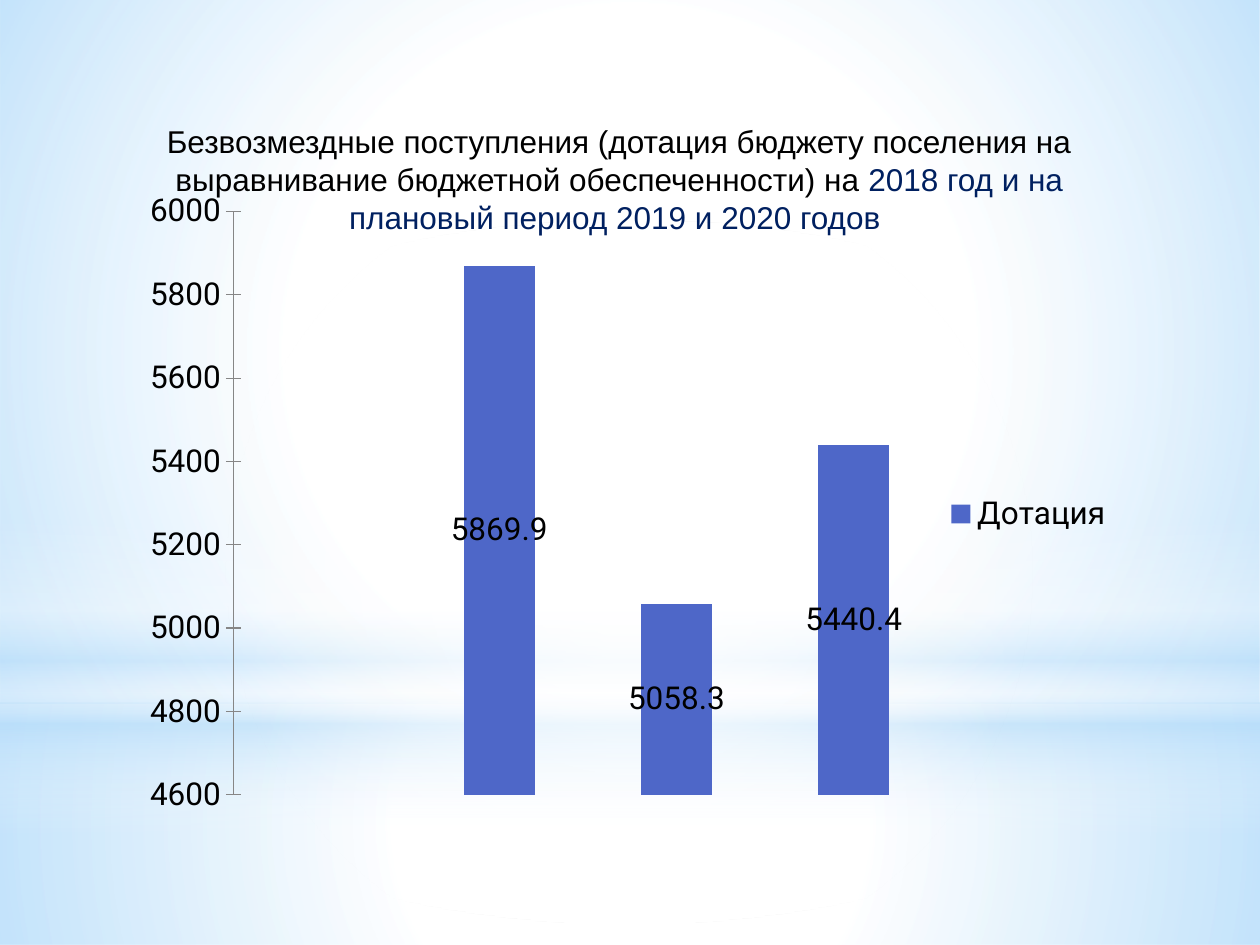
from lxml import etree
from pptx import Presentation
from pptx.chart.data import CategoryChartData
from pptx.dml.color import RGBColor
from pptx.enum import chart as ch, shapes, text
from pptx.oxml import parse_xml
from pptx.oxml.ns import nsdecls, qn
from pptx.util import Inches, Pt

THEME = {
    "white": "FFFFFF", "sky": "B4DCFA", "bar": "4E67C8",
    "ink": "000000", "navy": "002060", "axis": "868686",
    "title_font": "Arial", "chart_font": "Roboto", "size": 18,
}
CIRCLE = ('<a:path path="circle"><a:fillToRect l="50000" t="50000" '
          'r="50000" b="50000"/></a:path>')
DOWNWARD = '<a:lin ang="5400000" scaled="0"/>'

prs = Presentation()
prs.slide_width, prs.slide_height = Inches(10), Inches(7.5)
slide = prs.slides.add_slide(prs.slide_layouts[6])
slide.background.fill.solid()
slide.background.fill.fore_color.rgb = RGBColor.from_string(THEME["white"])


def share(left, top, width, height):
    return [int(part * whole) for part, whole in zip(
        (left, top, width, height), (prs.slide_width, prs.slide_height) * 2)]


def style(font, face, colour):
    font.name = THEME[face]
    font.size = Pt(THEME["size"])
    font.color.rgb = RGBColor.from_string(THEME[colour])


RECT, OVAL = shapes.MSO_SHAPE.RECTANGLE, shapes.MSO_SHAPE.OVAL
glows = [
    (RECT, (0, 0.744, 1, 0.256), CIRCLE,
     [(0, "white", 91), (37, "white", 76), (100, "sky", 79)]),
    (RECT, (0, 0, 1, 0.744), CIRCLE,
     [(0, "white", 89), (48, "white", 62), (100, "sky", 79)]),
    (RECT, (0, 0.549, 1, 0.333), DOWNWARD,
     [(0, "white", 0), (29, "white", 30), (45, "sky", 40),
      (55, "white", 26), (65, "sky", 60), (100, "white", 0)]),
    (OVAL, (0, 0.233, 1, 0.744), CIRCLE,
     [(0, "white", 100), (56, "white", 0)]),
]
for outline, place, direction, stops in glows:
    glow = slide.shapes.add_shape(outline, *share(*place))
    glow.shadow.inherit = False
    glow.line.fill.background()
    glow.fill.background()
    stop_list = "".join(
        f'<a:gs pos="{pos * 1000}"><a:srgbClr val="{THEME[colour]}">'
        f'<a:alpha val="{alpha * 1000}"/></a:srgbClr></a:gs>'
        for pos, colour, alpha in stops)
    props = glow.fill._xPr
    props.replace(props.find(qn("a:noFill")), parse_xml(
        f'<a:gradFill {nsdecls("a")} rotWithShape="1"><a:gsLst>{stop_list}'
        f'</a:gsLst>{direction}</a:gradFill>'))

heading = slide.shapes.add_textbox(*share(0.108, 0.123, 0.767, 0.135)).text_frame
heading.word_wrap = True
heading.auto_size = text.MSO_AUTO_SIZE.SHAPE_TO_FIT_TEXT
lines = [
    [("Безвозмездные поступления (дотация бюджету поселения на", "ink")],
    [("выравнивание бюджетной обеспеченности) на ", "ink"),
     ("2018 год и на плановый период 2019 и 2020 годов ", "navy")],
]
for number, pieces in enumerate(lines):
    line = heading.add_paragraph() if number else heading.paragraphs[0]
    line.alignment = text.PP_ALIGN.CENTER
    for words, colour in pieces:
        run = line.add_run()
        run.text = words
        style(run.font, "title_font", colour)

grants = CategoryChartData()
grants.categories = ["1", "2", "3", "4"]
grants.add_series("Дотация ", [None, 5869.9, 5058.3, 5440.4])
chart = slide.shapes.add_chart(
    ch.XL_CHART_TYPE.COLUMN_STACKED, *share(0.083, 0.196, 0.817, 0.696), grants).chart
style(chart.font, "chart_font", "ink")
chart.has_title = False
chart.has_legend = True
chart.legend.position = ch.XL_LEGEND_POSITION.RIGHT
chart.legend.include_in_layout = False

chart.category_axis.visible = False
amounts = chart.value_axis
amounts.has_major_gridlines = False
amounts.minimum_scale, amounts.maximum_scale, amounts.major_unit = 4600, 6000, 200
amounts.major_tick_mark = ch.XL_TICK_MARK.CROSS
amounts.format.line.color.rgb = RGBColor.from_string(THEME["axis"])
amounts.format.line.width = Pt(0.75)

columns = chart.plots[0]
columns.gap_width, columns.overlap = 150, 100
columns.vary_by_categories = False
grant = columns.series[0]
grant.format.fill.solid()
grant.format.fill.fore_color.rgb = RGBColor.from_string(THEME["bar"])
labels = grant.data_labels
labels.show_value = True
labels.position = ch.XL_LABEL_POSITION.CENTER
style(labels.font, "chart_font", "ink")

plot_area = chart.element.find(".//" + qn("c:plotArea"))
for old in plot_area.findall(qn("c:layout")):
    plot_area.remove(old)
layout = etree.Element(qn("c:layout"))
manual = etree.SubElement(layout, qn("c:manualLayout"))
for tag, value in [("layoutTarget", "inner"), ("xMode", "edge"), ("yMode", "edge"),
                   ("x", "0.125"), ("y", "0.04"), ("w", "0.689"), ("h", "0.887")]:
    etree.SubElement(manual, qn("c:" + tag)).set("val", value)
plot_area.insert(0, layout)

prs.save("out.pptx")
